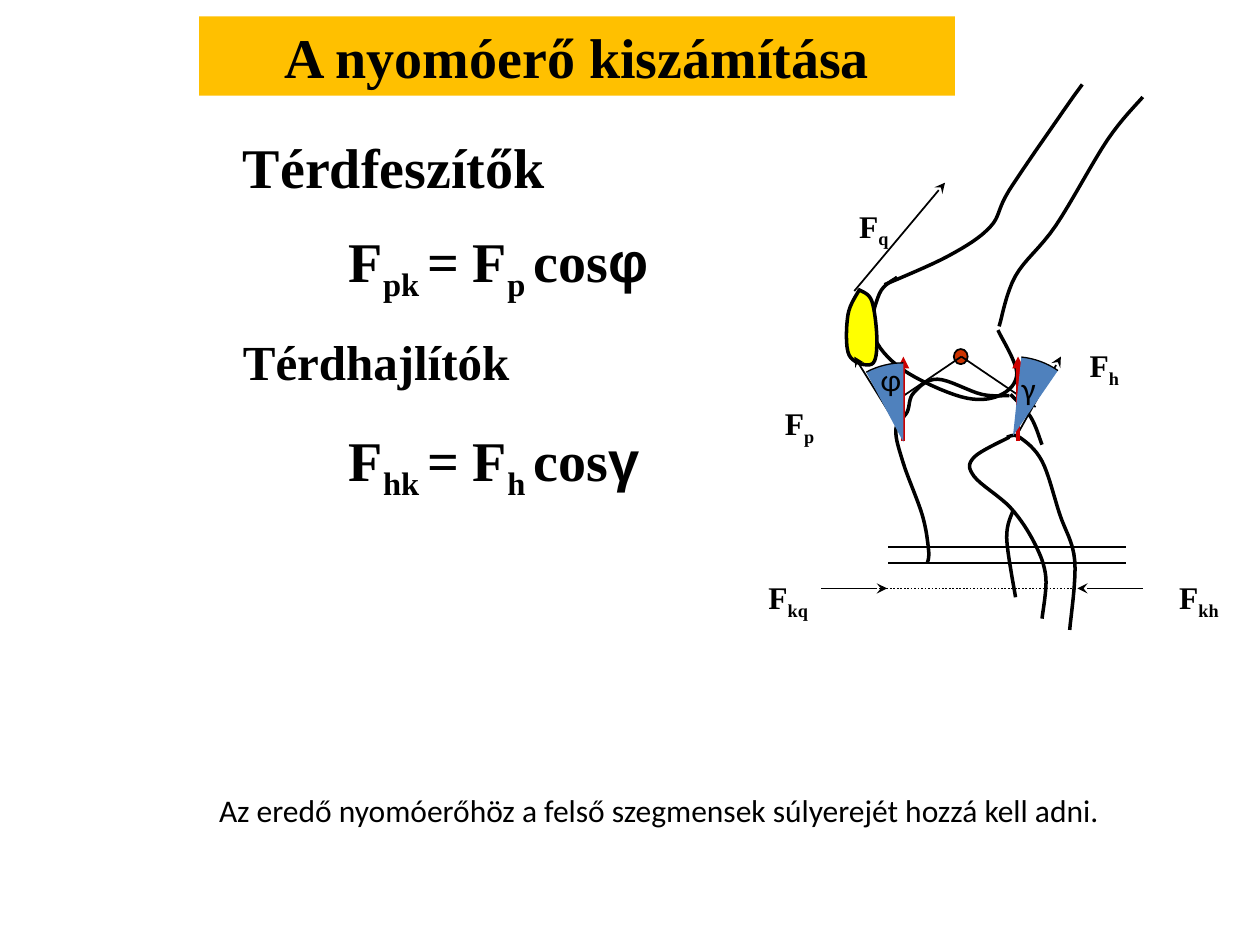
import math
import pptx
import pptx.util
import pptx.dml.color
import pptx.enum.dml
import pptx.enum.shapes
import pptx.enum.text
import pptx.oxml.ns
import lxml.etree

Inches = pptx.util.Inches

THEME = {
    "ink": "000000", "banner": "FFC000", "patella": "FFFF00", "pivot": "CC3300",
    "axis": "CC0000", "wedge": "4F81BD",
    "serif": "Times New Roman", "sans": "Calibri", "greek": "Arial",
    "heading": 32, "subheading": 28, "body": 18,
    "bone": 2, "force": 1, "component": 2.25, "arc": 0.75,
}

TITLE = ((1.58, 0.13, 6, 0.63), "A nyomóerő kiszámítása")
HEADINGS = [
    ((1.83, 1, 4, 0.63), "Térdfeszítők", "heading"),
    ((1.83, 2.58, 2.5, 0.57), "Térdhajlítók", "subheading"),
]
FORMULAS = [
    ((2.67, 1.75, 4.25, 0.64), "pk ", "p ", "φ"),
    ((2.67, 3.33, 4.25, 0.64), "hk ", "h ", "γ"),
]
FORCES = [
    ("q", (6.72, 1.59), (6.78, 2.31), (7.5, 1.45)),
    ("p", (6.13, 3.16), (7.11, 3.36), (6.78, 2.83)),
    ("kq", (6, 4.54), (6.52, 4.67), (7.04, 4.67)),
    ("h", (8.55, 2.7), (8.09, 3.42), (8.42, 2.83)),
    ("kh", (9.26, 4.54), (9.07, 4.67), (8.55, 4.67)),
]
FORCE_LABEL_SIZE = (0.65, 0.4)
ANGLE_LABELS = [((6.89, 2.81, 0.32, 0.4), "φ"), ((8.01, 2.88, 0.39, 0.4), "γ")]
NOTE = ((1.64, 6.23, 7.27, 0.4),
        "Az eredő nyomóerőhöz a felső szegmensek súlyerejét hozzá kell adni.")

BONES = {
    "fibula": [(8.01, 3.47), (7.73, 3.63), (7.73, 3.78), (8.02, 4.03), (8.21, 4.31),
               (8.3, 4.58), (8.27, 4.91)],
    "tibia back": [(7.99, 3.47), (8.09, 3.47), (8.27, 3.66), (8.41, 4.08), (8.53, 4.45),
                   (8.49, 5)],
    "plateau back": [(8.02, 3.13), (8.18, 3.31), (8.27, 3.53)],
    "tibia front": [(8.01, 3.14), (7.79, 3.13), (7.44, 3.01), (7.25, 3.12), (7.2, 3.27),
                    (7.11, 3.41), (7.17, 3.68), (7.32, 4.09), (7.37, 4.37), (7.36, 4.47)],
    "tibia crest": [(8.04, 4.05), (7.99, 4.27), (8.06, 4.74)],
    "femur condyle": [(7.12, 2.2), (6.98, 2.33), (6.93, 2.65), (7.16, 2.93), (7.63, 3.15),
                      (7.93, 3.14), (8.07, 2.96), (7.92, 2.62)],
    "femur front": [(7.02, 2.26), (7.53, 2.03), (7.86, 1.8), (8.01, 1.51), (8.44, 0.88),
                    (8.59, 0.67)],
    "femur back": [(7.93, 2.59), (8.06, 2.19), (8.38, 1.79), (8.79, 1.11), (9.07, 0.77)],
}
PATELLA = [(6.82, 2.3), (6.73, 2.5), (6.74, 2.82), (6.92, 2.89), (6.96, 2.7), (6.92, 2.39),
           (6.82, 2.3)]
LEVELS = [4.34, 4.47]
PIVOT = (7.57, 2.77, 0.11, 0.12)
PIVOT_CENTER = (7.63, 2.83)
LEVER_ENDS = [(7.04, 3.23), (8.22, 3.23)]
COMPONENTS = [7.17, 8.08]
WEDGES = [((7.17, 3.51), -28, 0), ((8.04, 3.46), 6, 34.5)]
WEDGE_RADIUS = 0.63
STEPS = 8

deck = pptx.Presentation()
deck.slide_width, deck.slide_height = Inches(10), Inches(7.5)
page = deck.slides.add_slide(deck.slide_layouts[6])


def color(name):
    return pptx.dml.color.RGBColor.from_string(THEME[name])


def paint(shape, fill=None, line=None, width="bone"):
    shape.shadow.inherit = False
    if fill:
        shape.fill.solid()
        shape.fill.fore_color.rgb = color(fill)
    else:
        shape.fill.background()
    if line:
        shape.line.color.rgb = color(line)
        shape.line.width = pptx.util.Pt(THEME[width])
    else:
        shape.line.fill.background()


def write(box, spans, size, face="serif", bold=True, spaced=True, wrap=True):
    frame = box.text_frame
    frame.word_wrap = wrap
    frame.auto_size = pptx.enum.text.MSO_AUTO_SIZE.SHAPE_TO_FIT_TEXT
    frame.vertical_anchor = pptx.enum.text.MSO_ANCHOR.TOP
    para = frame.paragraphs[0]
    if spaced:
        before = lxml.etree.SubElement(para._p.get_or_add_pPr(), pptx.oxml.ns.qn("a:spcBef"))
        lxml.etree.SubElement(before, pptx.oxml.ns.qn("a:spcPct"), val="50000")
    for text, style in spans:
        span = para.add_run()
        span.text = text
        span.font.size = pptx.util.Pt(THEME[size])
        span.font.bold = bold
        span.font.name = THEME["greek" if style == "greek" else face]
        span.font.color.rgb = color("ink")
        if style == "sub":
            span.font._element.set("baseline", "-25000")
    return para


def add_text(place, spans, size, **options):
    box = page.shapes.add_textbox(*map(Inches, place))
    return write(box, spans, size, **options)


def smooth(knots):
    padded = [knots[0], *knots, knots[-1]]
    curve = [knots[0]]
    for quad in zip(padded, padded[1:], padded[2:], padded[3:]):
        for step in range(1, STEPS + 1):
            t = step / STEPS
            curve.append(tuple(
                b + t * (c - a) / 2 + t * t * (a - 2.5 * b + 2 * c - d / 2)
                + t ** 3 * (3 * (b - c) + d - a) / 2
                for a, b, c, d in zip(*quad)))
    return curve


def add_outline(points, close=False, **look):
    first, *rest = [tuple(map(Inches, point)) for point in points]
    builder = page.shapes.build_freeform(*first)
    builder.add_line_segments(rest, close=close)
    paint(builder.convert_to_shape(), **look)


def add_line(start, end, ink="ink", width="force", head=None, dash=None):
    straight = pptx.enum.shapes.MSO_CONNECTOR.STRAIGHT
    link = page.shapes.add_connector(straight, *map(Inches, start + end))
    link.line.color.rgb = color(ink)
    link.line.width = pptx.util.Pt(THEME[width])
    if dash:
        link.line.dash_style = dash
    if head:
        lxml.etree.SubElement(link.line._get_or_add_ln(), pptx.oxml.ns.qn("a:tailEnd"), type=head)
    lxml.etree.SubElement(link._element.spPr, pptx.oxml.ns.qn("a:effectLst"))


def add_wedge(apex, start, end):
    angles = [math.radians(start + (end - start) * step / STEPS) for step in range(STEPS + 1)]
    arc = [(apex[0] + WEDGE_RADIUS * math.sin(angle), apex[1] - WEDGE_RADIUS * math.cos(angle))
           for angle in angles]
    add_outline(arc + [apex], close=True, fill="wedge")
    add_outline(arc, line="ink", width="arc")


shape_types = pptx.enum.shapes.MSO_SHAPE
banner = page.shapes.add_shape(shape_types.RECTANGLE, *map(Inches, TITLE[0]))
paint(banner, fill="banner")
write(banner, [(TITLE[1], None)], "heading").alignment = pptx.enum.text.PP_ALIGN.CENTER

for place, text, size in HEADINGS:
    add_text(place, [(text, None)], size)
for place, result, force, angle in FORMULAS:
    add_text(place, [("F", None), (result, "sub"), ("= F", None), (force, "sub"),
                     ("cos", None), (angle, "greek")], "heading")

for knots in BONES.values():
    add_outline(smooth(knots), line="ink")
add_outline(smooth(PATELLA), close=True, fill="patella", line="ink")

for index, corner, start, end in FORCES:
    add_line(start, end, head="stealth")
    add_text(corner + FORCE_LABEL_SIZE, [("F", None), (index, "sub")], "body")
for level in LEVELS:
    add_line((7.05, level), (8.94, level))

pivot = page.shapes.add_shape(shape_types.OVAL, *map(Inches, PIVOT))
paint(pivot, fill="pivot", line="ink", width="force")
for end in LEVER_ENDS:
    add_line(PIVOT_CENTER, end)
add_line((6.98, 4.67), (8.55, 4.67), dash=pptx.enum.dml.MSO_LINE.ROUND_DOT)
for x in COMPONENTS:
    add_line((x, 3.5), (x, 2.83), ink="axis", width="component", head="triangle")

for wedge in WEDGES:
    add_wedge(*wedge)
for place, angle in ANGLE_LABELS:
    add_text(place, [(angle, None)], "body", face="sans", bold=False)
add_text(NOTE[0], [(NOTE[1], None)], "body", face="sans", bold=False, spaced=False, wrap=False)

deck.save("out.pptx")
